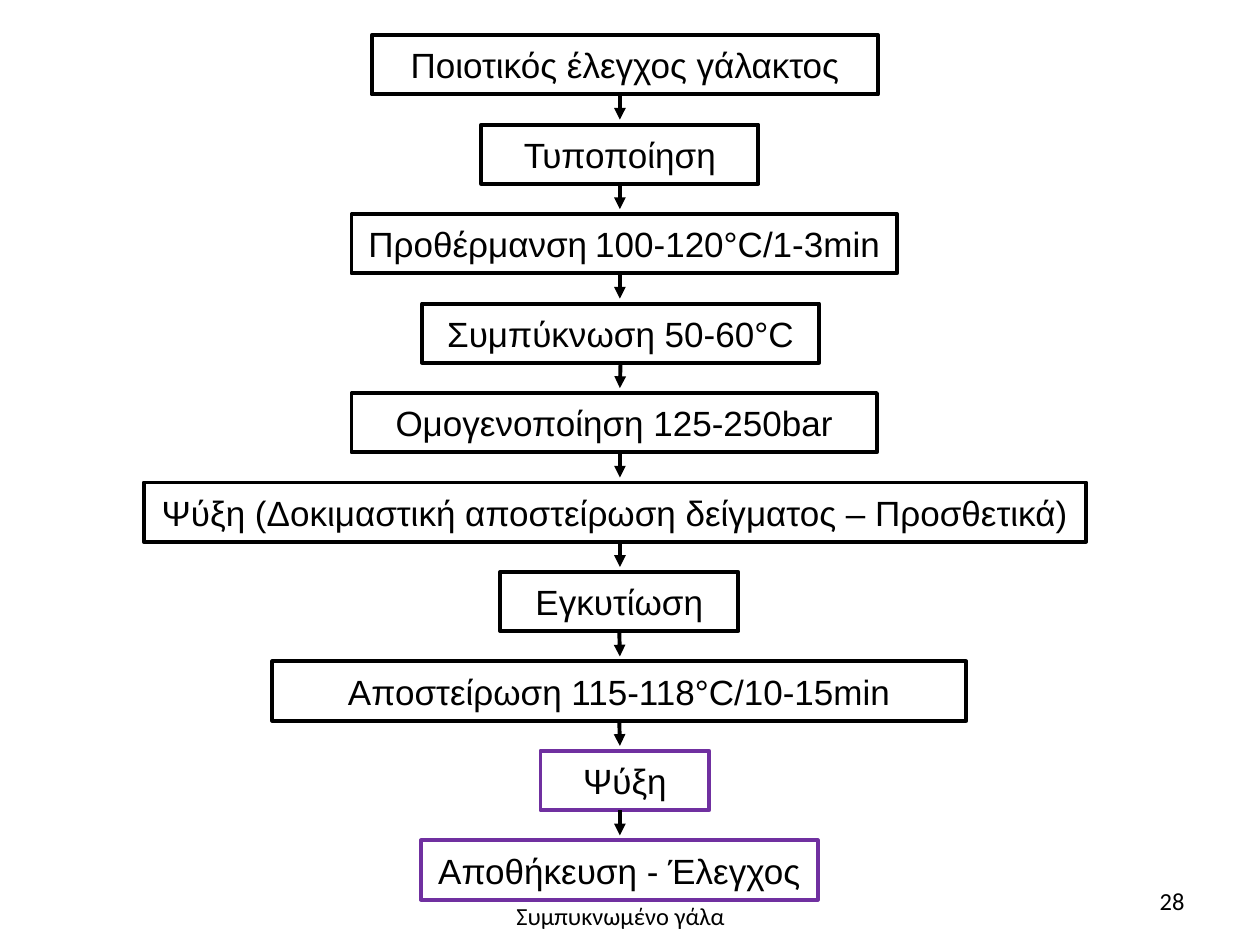
"""Build a flow chart slide of condensed milk production."""
import pptx
import pptx.dml.color
import pptx.enum.shapes
import pptx.enum.text
import pptx.oxml
import pptx.oxml.ns
import pptx.util

Inches = pptx.util.Inches
Align = pptx.enum.text.PP_ALIGN
Anchor = pptx.enum.text.MSO_ANCHOR

BLACK, PURPLE = "000000", "7030A0"
TOP, PITCH, HEIGHT = 0.28, 0.71, 0.47
AXIS, ARROW_LENGTH = 4.92, 0.2
STEPS = [
    (2.95, 4.02, BLACK, [("Ποιοτικός έλεγχος γάλακτος", 20)]),
    (3.82, 2.2, BLACK, [("Τυποποίηση", 20)]),
    (2.79, 4.33, BLACK, [("Προθέρμανση", 20), (" ", 16), ("100-120°C/1-3min", 20)]),
    (3.35, 3.15, BLACK, [("Συμπύκνωση 50-60°C", 20)]),
    (2.79, 4.17, BLACK, [("Ομογενοποίηση 125-250bar", 20)]),
    (1.14, 7.48, BLACK, [("Ψύξη (Δοκιμαστική αποστείρωση δείγματος – Προσθετικά)", 20)]),
    (3.97, 1.89, BLACK, [("Εγκυτίωση", 20)]),
    (2.16, 5.51, BLACK, [("Αποστείρωση 115-118°C/10-15min", 20)]),
    (4.29, 1.34, PURPLE, [("Ψύξη", 20)]),
    (3.34, 3.15, PURPLE, [("Αποθήκευση - Έλεγχος", 20)]),
]


def colour(value):
    return pptx.dml.color.RGBColor.from_string(value)


def apply(target, values):
    for name, value in values.items():
        setattr(target, name, value)


class FlowPage:
    """Hold the style and the current slide."""

    def __init__(self, page):
        self.page = page
        self.line_width = pptx.util.Pt(2.25)

    def fill_text(self, shape, spans, font, align, anchor):
        apply(shape.text_frame, {"word_wrap": False, "vertical_anchor": anchor})
        para = shape.text_frame.paragraphs[0]
        para.alignment = align
        for text, size in spans:
            span = para.add_run()
            span.text = text
            apply(span.font, {"name": font, "size": pptx.util.Pt(size)})
            span.font.color.rgb = colour(BLACK)

    def label(self, place, text, align, anchor):
        box = self.page.shapes.add_textbox(*map(Inches, place))
        self.fill_text(box, [(text, 14)], "Calibri", align, anchor)
        box.text_frame.word_wrap = True

    def step(self, place, edge, spans):
        box = self.page.shapes.add_shape(
            pptx.enum.shapes.MSO_SHAPE.RECTANGLE, *map(Inches, place))
        box.shadow.inherit = False
        box.fill.background()
        box.line.color.rgb = colour(edge)
        box.line.width = self.line_width
        self.fill_text(box, spans, "Arial", Align.CENTER, Anchor.MIDDLE)
        return box

    def arrow(self, box):
        start = box.top + box.height
        line = self.page.shapes.add_connector(
            pptx.enum.shapes.MSO_CONNECTOR.STRAIGHT,
            Inches(AXIS), start, Inches(AXIS), start + Inches(ARROW_LENGTH))
        if abs(box.left + box.width // 2 - Inches(AXIS)) < Inches(0.01):
            line.begin_connect(box, 2)
        line.line.color.rgb = colour(BLACK)
        line.line.width = self.line_width
        outline = line.line._get_or_add_ln()
        tail = pptx.oxml.parse_xml(
            f'<a:tailEnd {pptx.oxml.ns.nsdecls("a")} type="triangle"/>')
        outline.append(tail)
        effects = pptx.oxml.parse_xml(f'<a:effectLst {pptx.oxml.ns.nsdecls("a")}/>')
        outline.addnext(effects)


def main():
    deck = pptx.Presentation()
    apply(deck, {"slide_width": Inches(10), "slide_height": Inches(7.5)})
    flow = FlowPage(deck.slides.add_slide(deck.slide_layouts[6]))
    flow.label((7.17, 6.95, 2.33, 0.4), "28", Align.RIGHT, Anchor.MIDDLE)
    boxes = [
        flow.step((left, TOP + row * PITCH, width, HEIGHT), edge, spans)
        for row, (left, width, edge, spans) in enumerate(STEPS)
    ]
    for box in boxes[:-1]:
        flow.arrow(box)
    flow.label((3.18, 7.1, 3.49, 0.28), "Συμπυκνωμένο γάλα", Align.CENTER, Anchor.TOP)
    deck.save("out.pptx")


if __name__ == "__main__":
    main()
